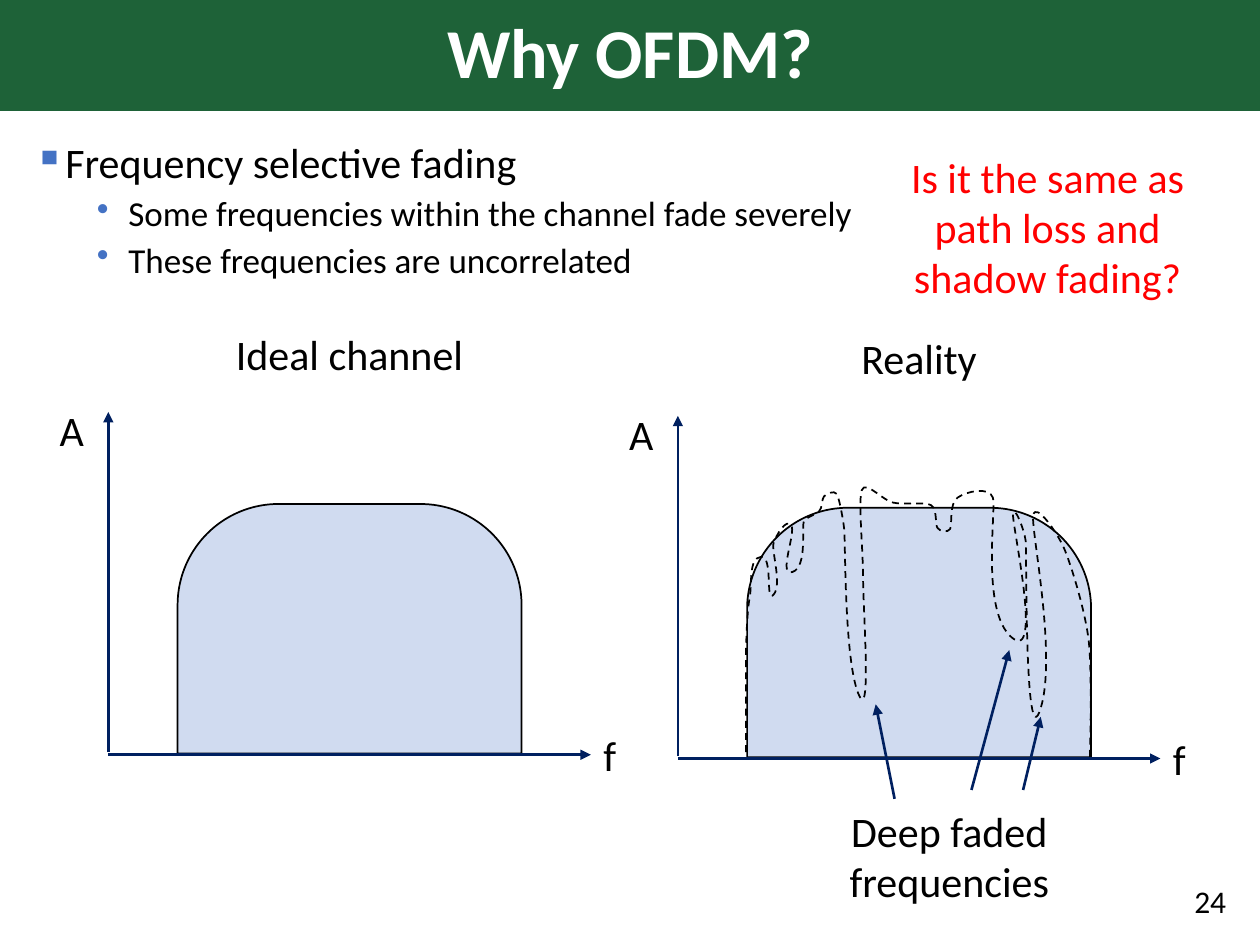
from dataclasses import dataclass
from math import hypot

from lxml.etree import SubElement
from pptx import Presentation
from pptx.dml.color import RGBColor
from pptx.enum.dml import MSO_LINE
from pptx.enum.shapes import MSO_CONNECTOR, MSO_SHAPE
from pptx.enum.text import MSO_ANCHOR, MSO_AUTO_SIZE, PP_ALIGN
from pptx.oxml.ns import qn
from pptx.util import Pt

PX = 9144  # EMU per px, 100 px to the inch
FONT = "Calibri"
COLORS = {
    "banner": "1E6238",
    "accent": "4472C4",
    "axis": "002060",
    "text": "000000",
    "title": "FFFFFF",
    "question": "FF0000",
}


@dataclass
class Label:
    text: str
    x: int
    y: int
    w: int
    h: int = 50
    size: int = 24
    color: str = "text"
    align: PP_ALIGN = PP_ALIGN.CENTER
    anchor: MSO_ANCHOR = MSO_ANCHOR.TOP
    grow: bool = True


@dataclass
class Arrow:
    x1: int
    y1: int
    x2: int
    y2: int


@dataclass
class Bullet:
    text: str
    level: int = 1
    size: int = 20
    char: str = "•"
    indent: int = 75
    before: int = 5


@dataclass
class Graph:
    name: str
    dx: int
    dy: int


BULLETS = [
    Bullet("Frequency selective fading", 0, 24, "▪", 25, 10),
    Bullet("Some frequencies within the channel fade severely"),
    Bullet("These frequencies are uncorrelated"),
]
GRAPHS = [Graph("Ideal channel", 0, 0), Graph("Reality", 452, 3)]
FADE_ARROWS = [
    Arrow(710, 634, 695, 559),
    Arrow(771, 627, 801, 516),
    Arrow(812, 627, 826, 569),
]
NOTES = [
    Label("Deep faded frequencies", 642, 634, 223, 91),
    Label("Is it the same as path loss and shadow fading?", 695, 115, 273, 131,
          color="question"),
    Label("24", 758, 695, 225, 40, 18, align=PP_ALIGN.RIGHT,
          anchor=MSO_ANCHOR.MIDDLE, grow=False),
]
# Peaks, dips and bends of the faded spectrum, left to right.
FADING = [
    (592, 597), (592, 526), (595, 474), (604, 442), (614, 472), (614, 431),
    (628, 417), (629, 454), (638, 414), (650, 406), (654, 394), (664, 392),
    (670, 420), (681, 550), (685, 460), (684, 389), (709, 399), (739, 401),
    (744, 419), (754, 420), (760, 395), (788, 395), (803, 506), (804, 408),
    (814, 429), (826, 562), (820, 409), (844, 434), (864, 508), (865, 601),
]


def rgb(name: str) -> RGBColor:
    return RGBColor.from_string(COLORS[name])


def add_run(p, text: str, size: int, color: str = "text", bold: bool = False) -> None:
    r = p.add_run()
    r.text = text
    r.font.name, r.font.size, r.font.bold = FONT, Pt(size), bold
    r.font.color.rgb = rgb(color)


def add_shape(s, kind: MSO_SHAPE, x: int, y: int, w: int, h: int, fill: str):
    sp = s.shapes.add_shape(kind, x * PX, y * PX, w * PX, h * PX)
    sp.shadow.inherit = False
    sp.fill.solid()
    sp.fill.fore_color.rgb = rgb(fill)
    return sp


def add_textbox(s, x: int, y: int, w: int, h: int):
    tf = s.shapes.add_textbox(x * PX, y * PX, w * PX, h * PX).text_frame
    tf.word_wrap = True
    return tf


def add_label(s, label: Label) -> None:
    tf = add_textbox(s, label.x, label.y, label.w, label.h)
    tf.vertical_anchor = label.anchor
    if label.grow:
        tf.auto_size = MSO_AUTO_SIZE.SHAPE_TO_FIT_TEXT
    p = tf.paragraphs[0]
    p.alignment = label.align
    add_run(p, label.text, label.size, label.color)


def add_arrow(s, a: Arrow) -> None:
    line = s.shapes.add_connector(
        MSO_CONNECTOR.STRAIGHT, a.x1 * PX, a.y1 * PX, a.x2 * PX, a.y2 * PX)
    line.line.color.rgb = rgb("axis")
    line.line.width = Pt(1.5)
    spPr = line._element.spPr
    SubElement(spPr.find(qn("a:ln")), qn("a:tailEnd"), type="triangle")
    SubElement(spPr, qn("a:effectLst"))


def add_banner(s, title: str) -> None:
    sp = add_shape(s, MSO_SHAPE.RECTANGLE, 0, 0, 1000, 88, "banner")
    sp.line.fill.background()
    sp.text_frame.vertical_anchor = MSO_ANCHOR.MIDDLE
    p = sp.text_frame.paragraphs[0]
    p.alignment, p.line_spacing = PP_ALIGN.CENTER, 0.9
    add_run(p, title, 40, "title", bold=True)


def add_bullets(s, bullets: list[Bullet]) -> None:
    tf = add_textbox(s, 17, 108, 965, 627)
    for i, b in enumerate(bullets):
        p = tf.add_paragraph() if i else tf.paragraphs[0]
        p.level, p.line_spacing, p.space_before = b.level, 0.9, Pt(b.before)
        pPr = p._p.get_or_add_pPr()
        pPr.set("marL", str(b.indent * PX))
        pPr.set("indent", str(-25 * PX))
        SubElement(SubElement(pPr, qn("a:buClr")), qn("a:srgbClr"), val=COLORS["accent"])
        SubElement(pPr, qn("a:buChar"), char=b.char)
        add_run(p, b.text, b.size)


def add_graph(s, g: Graph) -> None:
    """Draw a channel band with its axes, axis letters and heading."""
    x, y = g.dx, g.dy
    band = add_shape(s, MSO_SHAPE.ROUND_2_SAME_RECTANGLE, 141 + x, 400 + y, 273, 198, "accent")
    band.adjustments[0], band.adjustments[1] = 0.405, 0
    fill = band._element.spPr.find(qn("a:solidFill"))
    SubElement(fill[0], qn("a:alpha"), val="25000")
    band.line.color.rgb = rgb("text")
    band.line.width = Pt(1)
    add_arrow(s, Arrow(86 + x, 597 + y, 86 + x, 327 + y))
    add_arrow(s, Arrow(86 + x, 599 + y, 469 + x, 599 + y))
    for label in (Label(g.name, 166, 256, 223), Label("f", 444, 574, 80),
                  Label("A", 17, 316, 80)):
        label.x += x
        label.y += y
        add_label(s, label)


def smooth_points(knots: list[tuple]) -> list[tuple]:
    """Return two control points and an end point for each step between knots."""
    handles = []
    for a, b, c in zip(knots[:1] + knots, knots, knots[1:] + knots[-1:]):
        dx, dy = c[0] - a[0], c[1] - a[1]
        reach = min(hypot(b[0] - a[0], b[1] - a[1]), hypot(c[0] - b[0], c[1] - b[1]))
        k = reach / hypot(dx, dy) / 3
        handles.append((dx * k, dy * k))
    points = []
    for (x1, y1), (x2, y2), (u1, v1), (u2, v2) in zip(knots, knots[1:], handles, handles[1:]):
        points += [(x1 + u1, y1 + v1), (x2 - u2, y2 - v2), (x2, y2)]
    return points


def add_fading_curve(s) -> None:
    """Build the outline through all points, then make each three a Bézier segment."""
    builder = s.shapes.build_freeform(*FADING[0], scale=PX)
    builder.add_line_segments(smooth_points(FADING), close=False)
    sp = builder.convert_to_shape()
    sp.shadow.inherit = False
    sp.fill.background()
    sp.line.color.rgb = rgb("text")
    sp.line.width = Pt(1)
    sp.line.dash_style = MSO_LINE.DASH
    outline = sp._element.find(".//" + qn("a:path"))
    steps = outline.findall(qn("a:lnTo"))
    for i in range(0, len(steps), 3):
        bezier = SubElement(outline, qn("a:cubicBezTo"))
        for step in steps[i:i + 3]:
            bezier.append(step[0])
            outline.remove(step)


def main() -> None:
    prs = Presentation()
    prs.slide_width, prs.slide_height = 1000 * PX, 750 * PX
    s = prs.slides.add_slide(prs.slide_layouts[6])
    add_banner(s, "Why OFDM?")
    add_bullets(s, BULLETS)
    for graph in GRAPHS:
        add_graph(s, graph)
    add_fading_curve(s)
    for arrow in FADE_ARROWS:
        add_arrow(s, arrow)
    for note in NOTES:
        add_label(s, note)
    prs.save("out.pptx")


if __name__ == "__main__":
    main()
